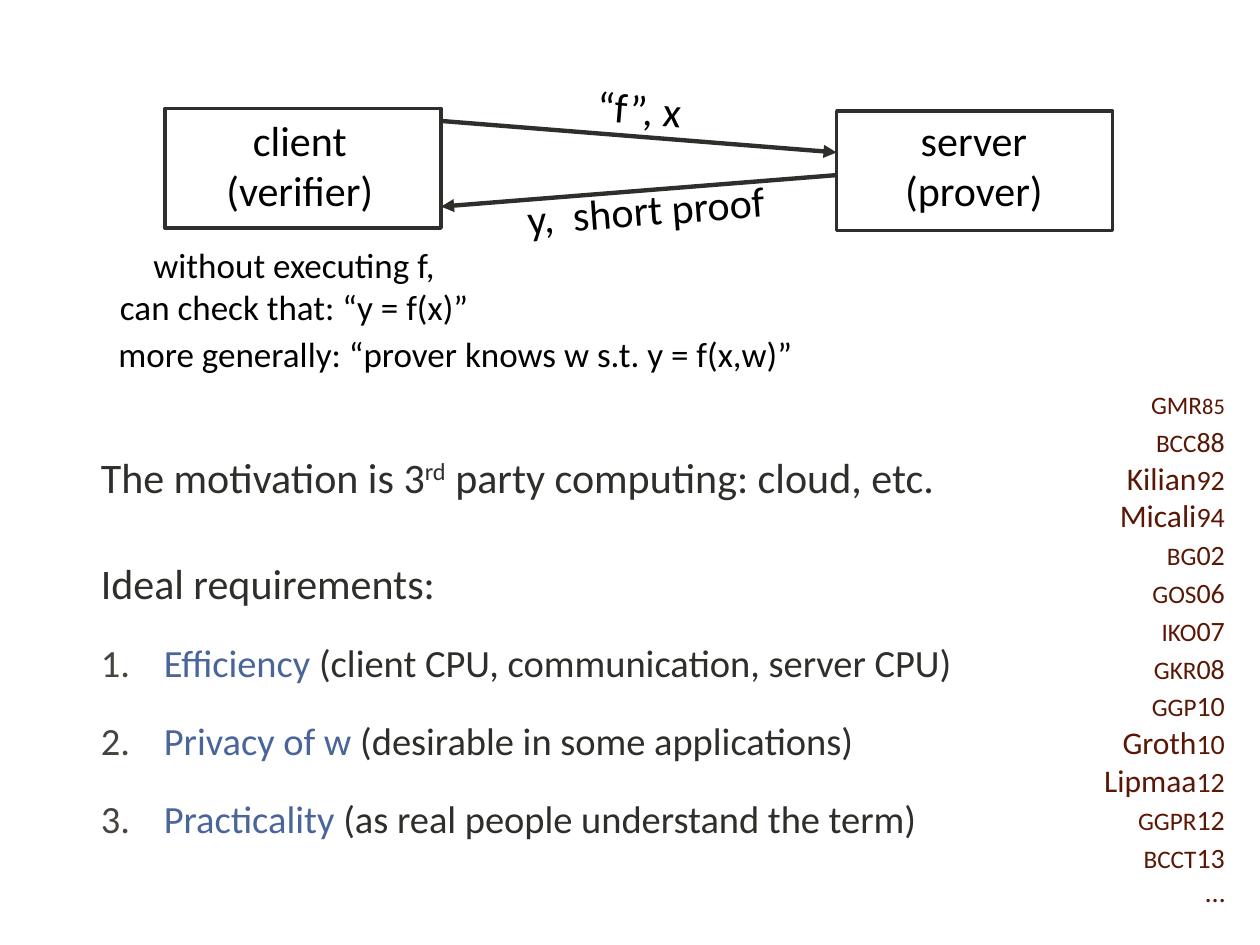
from dataclasses import dataclass

from lxml.etree import SubElement
from pptx import Presentation
from pptx.dml.color import RGBColor
from pptx.enum.shapes import MSO_CONNECTOR, MSO_SHAPE
from pptx.enum.text import MSO_ANCHOR, MSO_AUTO_SIZE, PP_ALIGN
from pptx.oxml.ns import qn
from pptx.util import Inches, Pt


@dataclass(frozen=True)
class Theme:
    font: str = "Calibri"
    ink: RGBColor = RGBColor.from_string("2D2F2B")
    label: RGBColor = RGBColor.from_string("000000")
    accent: RGBColor = RGBColor.from_string("4A659A")
    number: str = "47443E"
    citation: RGBColor = RGBColor.from_string("5A1705")
    heading_size: int = 24
    item_size: int = 22
    note_size: int = 20
    author_size: int = 18
    year_size: int = 16
    box_line: float = 2
    arrow_line: float = 2.5


THEME = Theme()

REQUIREMENTS = [
    ("Efficiency ", "(client CPU, communication, server CPU)"),
    ("Privacy of w ", "(desirable in some applications)"),
    ("Practicality ", "(as real people understand the term)"),
]

# Lower-case authors are initials, set in small capitals
CITATIONS = [
    ("gmr", "85"), ("bcc", "88"), ("Kilian", "92"), ("Micali", "94"),
    ("bg", "02"), ("gos", "06"), ("iko", "07"), ("gkr", "08"),
    ("ggp", "10"), ("Groth", "10"), ("Lipmaa", "12"), ("ggpr", "12"),
    ("bcct", "13"), ("", "…"),
]


def set_format(target, values):
    for attribute, value in values.items():
        setattr(target, attribute, value)


def add_run(paragraph, text, size, color):
    run = paragraph.add_run()
    run.text = text
    set_format(run.font, {"name": THEME.font, "size": Pt(size)})
    run.font.color.rgb = color
    return run


def add_text_frame(slide, box, rotation=0):
    holder = slide.shapes.add_textbox(*map(Inches, box))
    holder.rotation = rotation
    set_format(holder.text_frame, {
        "word_wrap": True,
        "auto_size": MSO_AUTO_SIZE.SHAPE_TO_FIT_TEXT,
        "vertical_anchor": MSO_ANCHOR.TOP,
    })
    return holder.text_frame


def next_paragraph(frame, index):
    return frame.add_paragraph() if index else frame.paragraphs[0]


def add_label(slide, box, lines, size, rotation=0):
    frame = add_text_frame(slide, box, rotation)
    for index, line in enumerate(lines):
        paragraph = next_paragraph(frame, index)
        paragraph.alignment = PP_ALIGN.CENTER
        add_run(paragraph, line, size, THEME.label)


def add_party(slide, box, lines, label_box):
    party = slide.shapes.add_shape(MSO_SHAPE.RECTANGLE, *map(Inches, box))
    party.shadow.inherit = False
    party.fill.background()
    party.line.color.rgb = THEME.ink
    party.line.width = Pt(THEME.box_line)
    add_label(slide, label_box, lines, THEME.heading_size)


def add_arrow(slide, start, end):
    arrow = slide.shapes.add_connector(
        MSO_CONNECTOR.STRAIGHT, *map(Inches, (*start, *end)))
    arrow.line.color.rgb = THEME.ink
    arrow.line.width = Pt(THEME.arrow_line)
    SubElement(arrow.line._get_or_add_ln(), qn("a:tailEnd"), type="triangle")
    SubElement(arrow._element.spPr, qn("a:effectLst"))


def add_protocol(slide, box):
    """Client and server exchanging a query and a proof."""
    left, top, width, _ = box
    party_width, party_height = 2.19, 0.95
    client_edge = left + party_width
    server_left = left + width - party_width

    add_party(slide, (left, top, party_width, party_height),
              ["client", "(verifier)"], (left + 0.3, top, 1.54, 0.91))
    add_party(slide, (server_left, top + 0.02, party_width, party_height),
              ["server", "(prover)"], (server_left + 0.01, top, 2.16, 0.91))

    # Query out, proof back
    add_arrow(slide, (client_edge, top + 0.1), (server_left, top + 0.35))
    add_arrow(slide, (server_left, top + 0.53), (client_edge, top + 0.78))
    add_label(slide, (left + 2.7, top - 0.25, 2.13, 0.5),
              ["“f”, x"], THEME.heading_size, 4.9)
    add_label(slide, (left + 2.52, top + 0.55, 2.59, 0.5),
              ["y,  short proof"], THEME.heading_size, 355.5)


def add_guarantees(slide, box):
    """What the client can verify."""
    left, top, width, _ = box
    add_label(slide, (left, top, 3.33, 0.77),
              ["without executing f,", "can check that: “y = f(x)”"],
              THEME.note_size)
    add_label(slide, (left, top + 0.71, width, 0.44),
              ["more generally: “prover knows w s.t. y = f(x,w)”"],
              THEME.note_size)


def set_list_style(paragraph, space, numbered):
    paragraph.space_before = Pt(space)
    properties = paragraph._p.get_or_add_pPr()
    hang = Inches(0.5) if numbered else 0
    properties.set("marL", str(hang))
    properties.set("indent", str(-hang))
    if numbered:
        color = SubElement(properties, qn("a:buClr"))
        SubElement(color, qn("a:srgbClr"), val=THEME.number)
        SubElement(properties, qn("a:buFont"), typeface=THEME.font)
        SubElement(properties, qn("a:buAutoNum"), type="arabicPeriod")
    else:
        SubElement(properties, qn("a:buNone"))


def fill_body(body, box):
    """Motivation and the numbered requirements."""
    set_format(body, dict(zip(("left", "top", "width", "height"),
                              map(Inches, box))))
    frame = body.text_frame
    set_format(frame, {"auto_size": MSO_AUTO_SIZE.NONE, "word_wrap": True,
                       "vertical_anchor": MSO_ANCHOR.TOP})

    motivation, heading = frame.paragraphs[0], frame.add_paragraph()
    for paragraph in (motivation, heading):
        set_list_style(paragraph, 32, numbered=False)
    add_run(motivation, "The motivation is 3", THEME.heading_size, THEME.ink)
    ordinal = add_run(motivation, "rd", THEME.heading_size, THEME.ink)
    ordinal.font._element.set("baseline", "30000")
    add_run(motivation, " party computing: cloud, etc.",
            THEME.heading_size, THEME.ink)
    add_run(heading, "Ideal requirements:", THEME.heading_size, THEME.ink)

    for goal, detail in REQUIREMENTS:
        paragraph = frame.add_paragraph()
        paragraph.level = 1
        set_list_style(paragraph, 18, numbered=True)
        add_run(paragraph, goal, THEME.item_size, THEME.accent)
        add_run(paragraph, detail, THEME.item_size, THEME.ink)


def add_citations(slide, box):
    """Right-aligned column of prior work."""
    frame = add_text_frame(slide, box)
    for index, (author, year) in enumerate(CITATIONS):
        paragraph = next_paragraph(frame, index)
        paragraph.alignment = PP_ALIGN.RIGHT
        if author:
            name = add_run(paragraph, author, THEME.author_size, THEME.citation)
            if author.islower():
                name.font._element.set("cap", "small")
        date = add_run(paragraph, year, THEME.year_size, THEME.citation)
        if index == 0:
            date.font._element.set("cap", "small")


def main():
    presentation = Presentation()
    set_format(presentation, {"slide_width": Inches(10),
                              "slide_height": Inches(7.5)})
    slide = presentation.slides.add_slide(presentation.slide_layouts[1])
    title = slide.shapes.title._element
    title.getparent().remove(title)

    fill_body(slide.placeholders[1], (0.7, 3.53, 8.88, 4.04))
    add_protocol(slide, (1.31, 0.86, 7.52, 0.97))
    add_guarantees(slide, (0.67, 1.88, 5.89, 1.15))
    add_citations(slide, (8.09, 2.99, 1.73, 4.11))
    presentation.save("out.pptx")


if __name__ == "__main__":
    main()
